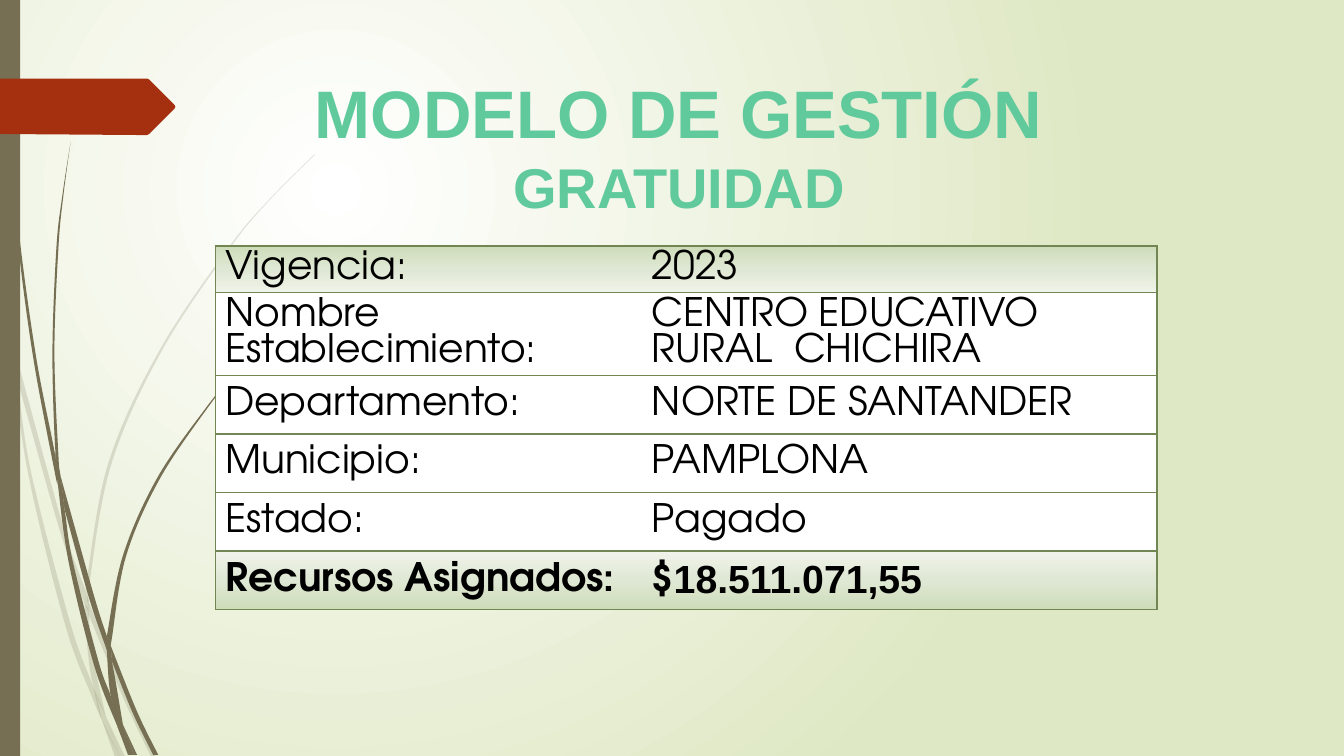
"""Build the free-tuition management slide with its grass border and summary table."""
from dataclasses import dataclass

from pptx import Presentation
from pptx.dml.color import RGBColor
from pptx.enum.shapes import MSO_SHAPE as Preset
from pptx.enum.text import MSO_ANCHOR as Anchor, PP_ALIGN as Align
from pptx.oxml import parse_xml
from pptx.oxml.ns import nsdecls, qn
from pptx.util import Inches, Pt


@dataclass(frozen=True)
class Theme:
    olive: str = "766F54"
    red: str = "A53010"
    mint: str = "60CA9D"
    border: str = "728653"
    black: str = "000000"
    white: str = "FFFFFF"
    backdrop: tuple = ((0, "FFFFFF"), (100, "DFE8C4"))
    band: tuple = ((0, "CEDCBA"), (50, "DFE8D4"), (100, "EFF3E9"))
    heading_font: str = "Arial"
    table_font: str = "TeX Gyre Adventor"
    heading_size: int = 48
    subheading_size: int = 40
    table_size: int = 28


THEME = Theme()
WIDTH, HEIGHT = 13.33, 7.5
TITLE_BOX = (0.14, 0.66, 13.19, 1.11)
TABLE_BOX = (2.135, 2.44, 9.34, 3.92)
COLUMNS = (4.23, 5.11)
ROWS = (0.46, 0.64, 0.58, 0.58, 0.58, 0.58)
HEADING = ("MODELO DE GESTIÓN", "GRATUIDAD")
RECORDS = [
    ("Vigencia:", ["2023"]),
    ("Nombre Establecimiento:", ["CENTRO EDUCATIVO RURAL  CHICHIRA"]),
    ("Departamento:", ["NORTE DE SANTANDER"]),
    ("Municipio:", ["PAMPLONA"]),
    ("Estado:", ["Pagado"]),
    ("Recursos Asignados:", ["$", "18.511.071,55"]),
]
LAST = len(RECORDS) - 1
BAND_ANGLES = {0: 90, LAST: 270}

PALE_BLADES = [
    ([(0, 2.82), (0.09, 3.22), (0.11, 3.5)], [(0, 2.99), (0.1, 3.44), (0.11, 3.5)]),
    ([(0.14, 3.45), (0.62, 5.2), (0.85, 5.86)], [(0.17, 3.76), (0.58, 5.22), (0.84, 5.99)]),
    ([(0.88, 5.96), (0.92, 6.07), (1.27, 6.92), (1.55, 7.51)], [(0.88, 6.1), (1.23, 6.94), (1.5, 7.51)]),
    ([(1.05, 7.11), (1.24, 7.51)], [(1.05, 7.11), (1.19, 7.51)]),
    ([(0.11, 3.5), (0.17, 3.76), (0.31, 4.69), (0.7, 6.19), (0.93, 6.83), (1.01, 7.14)],
     [(0.11, 3.5), (0.28, 4.7), (0.65, 6.21), (0.92, 6.93), (1.01, 7.14)]),
    ([(0.84, 5.99), (0.88, 6.08), (0.91, 6.46), (1.05, 7.11)],
     [(0.84, 5.99), (0.87, 6.46), (0.93, 6.83), (1.05, 7.11)]),
    ([(3.12, 1.53), (2.68, 1.97), (2.28, 2.44), (1.58, 3.48), (1.07, 4.61), (0.85, 5.84)],
     [(3.12, 1.54), (2.68, 1.98), (2.29, 2.45), (1.6, 3.49), (1.1, 4.62), (0.88, 5.84), (0.88, 5.96)]),
    ([(1.01, 7.14), (1.19, 7.51)], [(1.01, 7.14), (1.14, 7.51)]),
    ([(0.85, 5.86), (0.88, 5.96), (0.88, 6.1)], [(0.84, 5.99), (0.88, 6.08)]),
    ([(0.93, 6.83), (1.05, 7.11), (1.19, 7.51)], [(0.93, 6.83), (1.01, 7.14), (1.19, 7.51)]),
]
DARK_BLADES = [
    ([(0.04, 0), (0.05, 0.48), (0.08, 1.09), (0.19, 2.32), (0.36, 3.55), (0.55, 4.53), (0.57, 4.81)],
     [(0.03, 0), (0.04, 0.48), (0.07, 1.1), (0.17, 2.33), (0.33, 3.55), (0.56, 4.77)]),
    ([(0.6, 4.72), (0.93, 5.9), (1.06, 6.31)], [(0.64, 5.05), (0.88, 5.92), (1.06, 6.45)]),
    ([(1.1, 6.41), (1.36, 7.06), (1.57, 7.49)], [(1.11, 6.56), (1.32, 7.08), (1.52, 7.49)]),
    ([(0.57, 4.77), (0.64, 5.05), (0.72, 5.56), (0.98, 6.57), (1.1, 6.91), (1.17, 7.22)],
     [(0.57, 4.77), (0.68, 5.57), (0.93, 6.59), (1.17, 7.22)]),
    ([(0.7, 1.41), (0.62, 1.93), (0.56, 2.45), (0.52, 3.49), (0.55, 4.49), (0.6, 4.72)],
     [(0.7, 1.41), (0.63, 1.93), (0.58, 2.45), (0.54, 3.49), (0.58, 4.53), (0.6, 4.72)]),
    ([(1.22, 7.19), (1.36, 7.49)], [(1.22, 7.19), (1.33, 7.49)]),
    ([(0.55, 4.49), (0.6, 4.72), (0.64, 5.05)], [(0.55, 4.53), (0.57, 4.77), (0.64, 5.05)]),
    ([(2.6, 3.44), (2.31, 3.73), (2.04, 4.05), (1.56, 4.74), (1.22, 5.51), (1.06, 6.31)],
     [(2.61, 3.44), (2.31, 3.74), (2.05, 4.06), (1.58, 4.76), (1.25, 5.52), (1.11, 6.33), (1.1, 6.41)]),
    ([(1.17, 7.22), (1.31, 7.49)], [(1.17, 7.22), (1.27, 7.49)]),
    ([(1.06, 6.45), (1.11, 6.56), (1.22, 7.19)], [(1.06, 6.45), (1.1, 6.91), (1.22, 7.19)]),
    ([(1.06, 6.31), (1.1, 6.41), (1.11, 6.56)], [(1.06, 6.31), (1.06, 6.45), (1.11, 6.56)]),
    ([(1.1, 6.91), (1.22, 7.19), (1.33, 7.49)], [(1.1, 6.91), (1.17, 7.22), (1.3, 7.49)]),
]
TAG = [(0, 0.78), (1.46, 0.78), (1.48, 0.79), (1.73, 1.04), (1.74, 1.06), (1.73, 1.08),
       (1.48, 1.33), (1.46, 1.34), (1.36, 1.34), (0, 1.33)]


def inches(values):
    return [Inches(value) for value in values]


def curve_handles(edge):
    """Return the two Bezier handles of each span of a smooth edge."""
    padded = [edge[0], *edge, edge[-1]]
    return [([q + (r - p) / 6 for p, q, r in zip(a, b, c)],
             [r - (s - q) / 6 for q, r, s in zip(b, c, d)])
            for a, b, c, d in zip(padded, padded[1:], padded[2:], padded[3:])]


def paint(shape, color, alpha=100):
    shape.shadow.inherit = False
    shape.fill.solid()
    shape.fill.fore_color.rgb = RGBColor.from_string(color)
    shape.line.fill.background()
    if alpha < 100:
        tone = shape.element.spPr.find(f".//{qn('a:srgbClr')}")
        tone.append(parse_xml(f'<a:alpha {nsdecls("a")} val="{alpha * 1000}"/>'))


def draw_outline(slide, points, color, alpha=100):
    first, *rest = [inches(point) for point in points]
    builder = slide.shapes.build_freeform(*first)
    builder.add_line_segments(rest, close=True)
    shape = builder.convert_to_shape()
    paint(shape, color, alpha)
    return shape


def draw_blade(slide, outer, inner, alpha):
    back = inner[::-1]
    joint = [] if outer[-1] == back[0] else [None]
    shape = draw_outline(slide, outer + (back if joint else back[1:]), THEME.olive, alpha)
    handles = curve_handles(outer) + joint + curve_handles(back)
    for line, pair in zip(shape.element.findall(f".//{qn('a:lnTo')}"), handles):
        if pair:
            marks = "".join(f'<a:pt x="{Inches(x) - shape.left}" y="{Inches(y) - shape.top}"/>'
                            for x, y in pair)
            curve = parse_xml(f'<a:cubicBezTo {nsdecls("a")}>{marks}</a:cubicBezTo>')
            curve.append(line[0])
            line.getparent().replace(line, curve)


def gradient(stops, direction):
    colors = "".join(f'<a:gs pos="{position * 1000}"><a:srgbClr val="{color}"/></a:gs>'
                     for position, color in stops)
    return parse_xml(f'<a:gradFill {nsdecls("a")} rotWithShape="1">'
                     f'<a:gsLst>{colors}</a:gsLst>{direction}</a:gradFill>')


def set_backdrop(slide):
    slide.background.fill.gradient()
    current = slide.element.find(f".//{qn('a:gradFill')}")
    circle = '<a:path path="circle"><a:fillToRect l="50000" t="50000" r="100000" b="100000"/></a:path>'
    current.getparent().replace(current, gradient(THEME.backdrop, circle))


def add_run(paragraph, text, font, size, color, bold=False):
    run = paragraph.add_run()
    run.text = text
    run.font.name, run.font.size, run.font.bold = font, Pt(size), bold
    run.font.color.rgb = RGBColor.from_string(color)


def add_heading(slide):
    title = slide.shapes.title
    title.left, title.top, title.width, title.height = inches(TITLE_BOX)
    title.text_frame.word_wrap, title.text_frame.vertical_anchor = True, Anchor.TOP
    paragraph = title.text_frame.paragraphs[0]
    paragraph.alignment = Align.CENTER
    add_run(paragraph, HEADING[0], THEME.heading_font, THEME.heading_size, THEME.mint, True)
    paragraph.add_line_break()
    add_run(paragraph, HEADING[1], THEME.heading_font, THEME.subheading_size, THEME.mint, True)


def style_cell(cell, row, column):
    properties = cell._tc.get_or_add_tcPr()
    solid = f'<a:solidFill><a:srgbClr val="{THEME.border}"/></a:solidFill>'
    for side in "LRTB":
        stroke = "<a:noFill/>" if side == "RL"[column] else solid
        properties.append(parse_xml(f'<a:ln{side} {nsdecls("a")} w="{Pt(1)}">{stroke}</a:ln{side}>'))
    if row in BAND_ANGLES:
        direction = f'<a:lin ang="{BAND_ANGLES[row] * 60000}" scaled="0"/>'
        properties.append(gradient(THEME.band, direction))
    else:
        cell.fill.solid()
        cell.fill.fore_color.rgb = RGBColor.from_string(THEME.white)
    cell.vertical_anchor = Anchor.MIDDLE


def add_summary(slide):
    frame = slide.shapes.add_table(len(ROWS), len(COLUMNS), *inches(TABLE_BOX))
    table = frame.table
    table.first_row = table.horz_banding = False
    for column, width in zip(table.columns, COLUMNS):
        column.width = Inches(width)
    for index, (label, values) in enumerate(RECORDS):
        table.rows[index].height = Inches(ROWS[index])
        for column, texts in enumerate(([label], values)):
            cell = table.cell(index, column)
            style_cell(cell, index, column)
            for position, text in enumerate(texts):
                font = THEME.heading_font if position else THEME.table_font
                add_run(cell.text_frame.paragraphs[0], text, font, THEME.table_size, THEME.black, index == LAST)
    frame.height = Inches(TABLE_BOX[3])


def main():
    presentation = Presentation()
    presentation.slide_width, presentation.slide_height = inches((WIDTH, HEIGHT))
    slide = presentation.slides.add_slide(presentation.slide_layouts[5])
    set_backdrop(slide)
    for blades, alpha in ((PALE_BLADES, 20), (DARK_BLADES, 100)):
        for outer, inner in blades:
            draw_blade(slide, outer, inner, alpha)
    paint(slide.shapes.add_shape(Preset.RECTANGLE, *inches((0, 0, 0.2, HEIGHT))), THEME.olive)
    draw_outline(slide, TAG, THEME.red)
    add_heading(slide)
    add_summary(slide)
    presentation.save("out.pptx")


if __name__ == "__main__":
    main()
